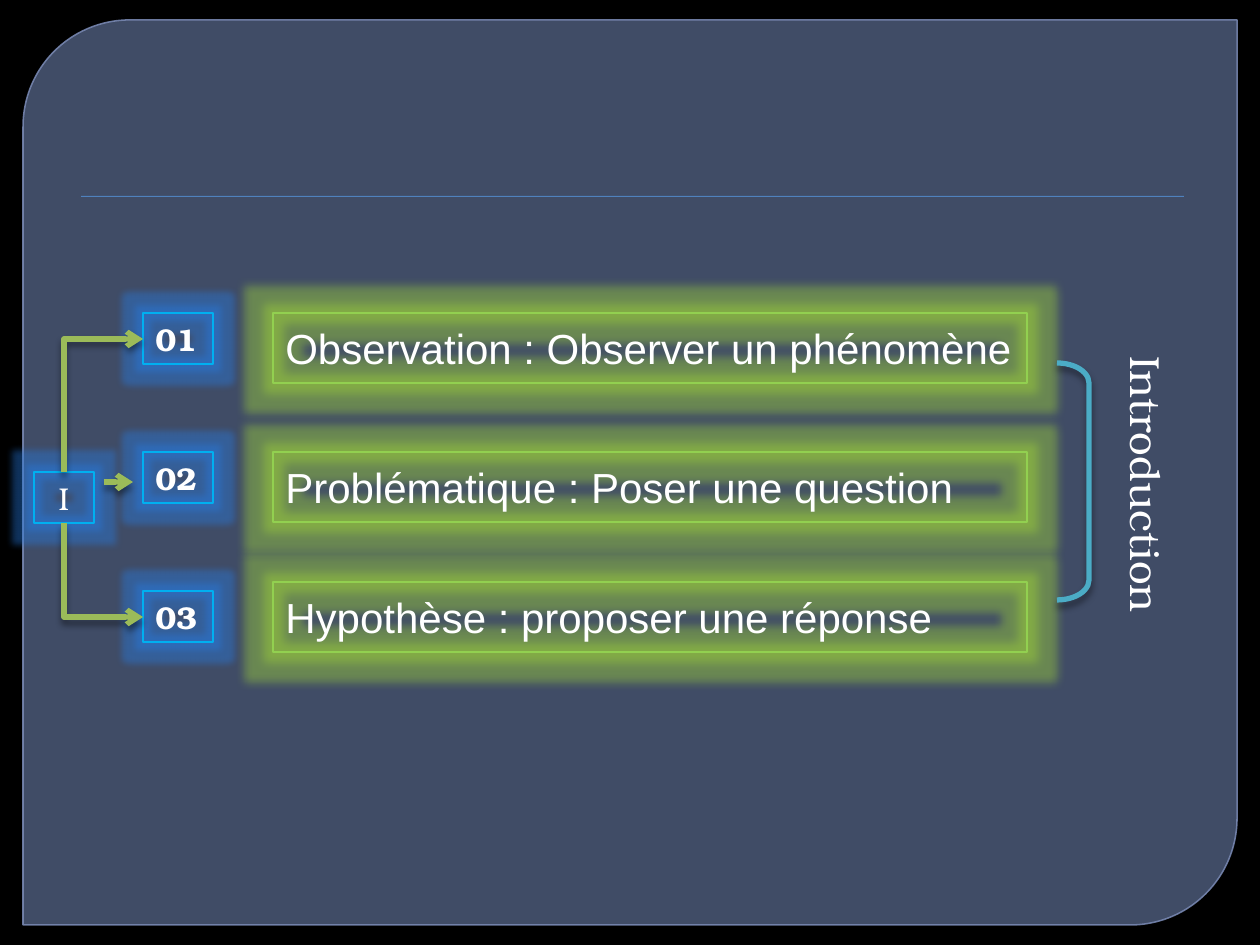
from lxml import etree
from pptx import Presentation
from pptx import util as u
from pptx.dml.color import RGBColor
from pptx.enum import shapes, text
from pptx.oxml import parse_xml
from pptx.oxml.ns import nsdecls, qn

STEPS = [
    ("01", "Observation : Observer un phénomène"),
    ("02", "Problématique : Poser une question"),
    ("03", "Hypothèse : proposer une réponse"),
]
NUMBER_TOPS = [313 + 139 * row for row in range(len(STEPS))]
STEP_TOPS = [313, 452, 582]

BLACK = RGBColor(0x00, 0x00, 0x00)
WHITE = RGBColor(0xFF, 0xFF, 0xFF)
PANEL = RGBColor(0x63, 0x75, 0x9D)
PANEL_EDGE = RGBColor(0x79, 0x89, 0xB3)
RULE = RGBColor(0x4F, 0x81, 0xBD)
CYAN = RGBColor(0x00, 0xB0, 0xF0)
LIME = RGBColor(0x92, 0xD0, 0x50)
TEAL = RGBColor(0x4B, 0xAC, 0xC6)
OLIVE = RGBColor(0x9B, 0xBB, 0x59)
BLUE_GLOW = RGBColor(0x26, 0x7D, 0xE6)
GREEN_GLOW = RGBColor(0xA8, 0xE0, 0x34)
SERIF, SANS = "TeX Gyre Bonum", "Arial"


def px(value):
    return u.Emu(round(value * 914400 / 126))


def set_effect(shape, content=""):
    """Replace the shape's effects; no content means no effect."""
    properties = shape._element.spPr
    for old in properties.findall(qn("a:effectLst")):
        properties.remove(old)
    properties.append(parse_xml(f"<a:effectLst {nsdecls('a')}>{content}</a:effectLst>"))


def add_shadow(shape, alpha, blur, distance):
    set_effect(shape, f'<a:outerShdw blurRad="{u.Pt(blur)}" dist="{u.Pt(distance)}" '
                      f'dir="5400000" rotWithShape="0"><a:srgbClr val="{BLACK}">'
                      f'<a:alpha val="{alpha * 1000}"/></a:srgbClr></a:outerShdw>')


def add_glow(shape, color, radius):
    set_effect(shape, f'<a:glow rad="{u.Pt(radius)}"><a:srgbClr val="{color}">'
                      f'<a:alpha val="40000"/></a:srgbClr></a:glow>')


def set_alpha(fill, percent):
    color = fill._xPr.find(qn("a:solidFill"))[0]
    etree.SubElement(color, qn("a:alpha")).set("val", str(percent * 1000))


def add_shape(slide, kind, box, fill=None, line=None, width=0.75):
    shape = slide.shapes.add_shape(kind, *map(px, box))
    shape.shadow.inherit = False
    if fill is None:
        shape.fill.background()
    else:
        shape.fill.solid()
        shape.fill.fore_color.rgb = fill
    if line is None:
        shape.line.fill.background()
    else:
        shape.line.color.rgb = line
        shape.line.width = u.Pt(width)
    return shape


def add_label(slide, box, words, size, font, line=None, bold=False,
              align=text.PP_ALIGN.LEFT):
    shape = add_shape(slide, shapes.MSO_SHAPE.RECTANGLE, box, line=line)
    frame = shape.text_frame
    frame.word_wrap = True
    frame.vertical_anchor = text.MSO_ANCHOR.MIDDLE
    paragraph = frame.paragraphs[0]
    paragraph.alignment = align
    run = paragraph.add_run()
    run.text = words
    run.font.size = u.Pt(size)
    run.font.name = font
    run.font.bold = bold
    run.font.color.rgb = WHITE
    return shape


def add_arrow(slide, kind, start, end):
    arrow = slide.shapes.add_connector(kind, *map(px, start + end))
    arrow.line.color.rgb = OLIVE
    arrow.line.width = u.Pt(3)
    etree.SubElement(arrow.line._get_or_add_ln(), qn("a:tailEnd")).set("type", "arrow")
    add_shadow(arrow, 43, 4, 3)
    return arrow


def add_corner_arrow(slide, source, side, target, start, end):
    """Leave the source vertically, turn once and enter the target's left side."""
    arrow = add_arrow(slide, shapes.MSO_CONNECTOR.ELBOW, start, end)
    arrow.begin_connect(source, side)
    arrow.end_connect(target, 1)
    run, rise = end[0] - start[0], abs(end[1] - start[1])
    upward = end[1] < start[1]
    # The frame is turned a quarter, so its width is the vertical reach.
    arrow.left = px((start[0] + end[0] - rise) / 2)
    arrow.top = px((start[1] + end[1] - run) / 2)
    arrow.width, arrow.height = px(rise), px(run)
    properties = arrow._element.spPr
    frame = properties.find(qn("a:xfrm"))
    frame.set("rot", "5400000" if upward else "16200000")
    frame.set("flipH", "1")
    frame.set("flipV", "1" if upward else "0")
    properties.find(qn("a:prstGeom")).set("prst", "bentConnector2")


def main():
    presentation = Presentation()
    presentation.slide_width, presentation.slide_height = px(1260), px(945)
    slide = presentation.slides.add_slide(presentation.slide_layouts[6])
    slide.background.fill.solid()
    slide.background.fill.fore_color.rgb = BLACK

    panel = add_shape(slide, shapes.MSO_SHAPE.ROUND_2_DIAG_RECTANGLE,
                      (23, 20, 1214, 905), PANEL, PANEL_EDGE, 0.87)
    panel.adjustments[0], panel.adjustments[1] = 0.118, 0
    set_alpha(panel.fill, 65)
    set_alpha(panel.line.fill, 88)
    rule = add_shape(slide, shapes.MSO_SHAPE.RECTANGLE, (81, 196, 1103, 1), RULE)
    add_shadow(rule, 75, 1, 1)

    part = add_label(slide, (34, 472, 60, 51), "I", 18, SERIF, CYAN,
                     align=text.PP_ALIGN.CENTER)
    add_glow(part, BLUE_GLOW, 8)

    numbers = []
    for (number, words), number_top, step_top in zip(STEPS, NUMBER_TOPS, STEP_TOPS):
        badge = add_label(slide, (143, number_top, 70, 51), number, 18, SERIF, CYAN, True)
        add_glow(badge, BLUE_GLOW, 8)
        numbers.append(badge)
        step = add_label(slide, (273, step_top, 754, 70), words, 24, SANS, LIME)
        add_glow(step, GREEN_GLOW, 11)

    bracket = add_shape(slide, shapes.MSO_SHAPE.RIGHT_BRACKET, (1057, 363, 32, 237),
                        line=TEAL, width=3)
    bracket.adjustments[0] = 0.625
    add_shadow(bracket, 43, 4, 3)
    heading = add_label(slide, (1004, 456, 287, 63), "Introduction", 24, SERIF)
    heading.rotation = 90

    add_corner_arrow(slide, part, 0, numbers[0], (64, 472), (143, 339))
    add_corner_arrow(slide, part, 2, numbers[2], (64, 523), (143, 617))
    add_arrow(slide, shapes.MSO_CONNECTOR.STRAIGHT, (104, 482), (133, 482))

    presentation.save("out.pptx")


if __name__ == "__main__":
    main()
